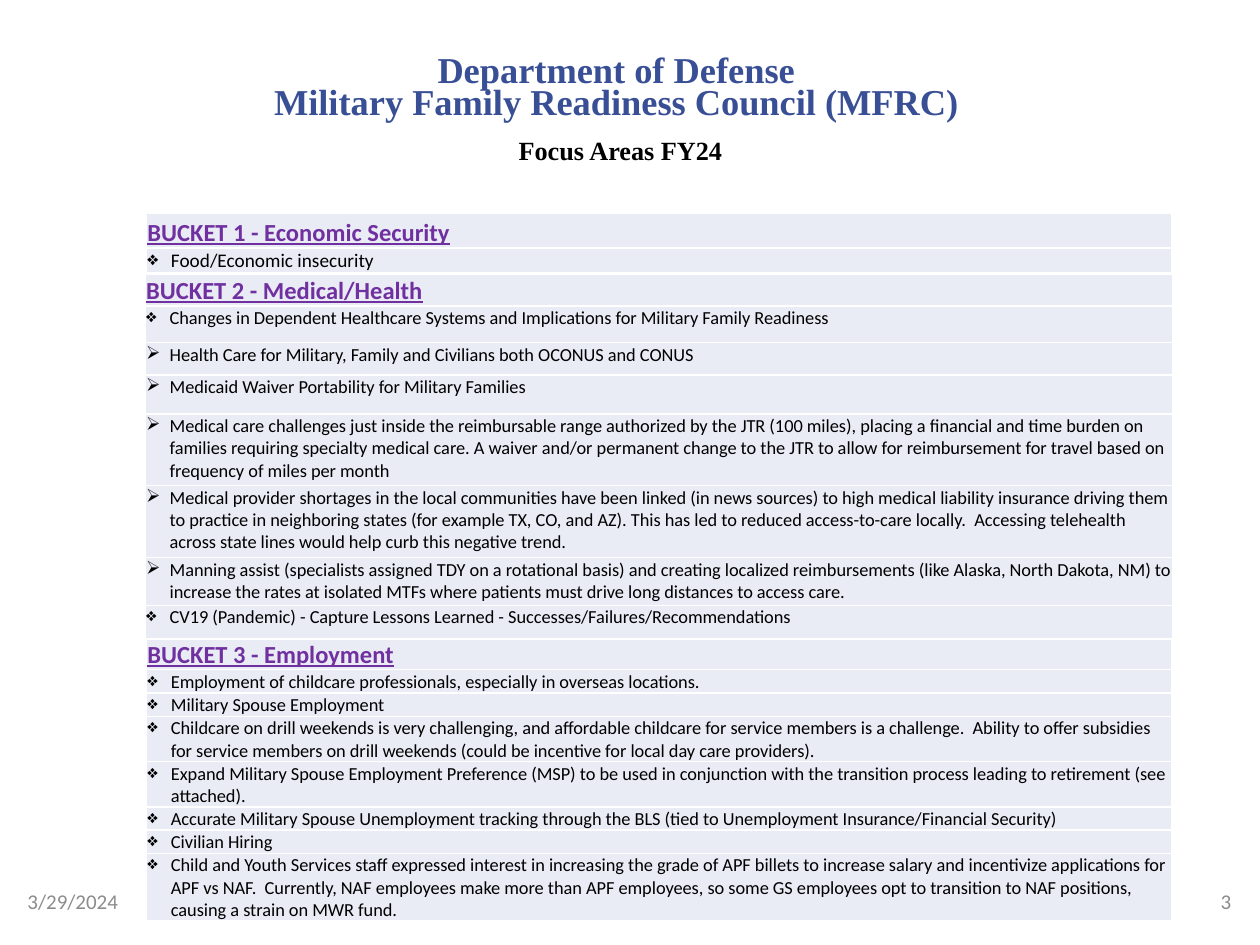
"""Build the council focus-areas slide with its three bucket tables."""
from dataclasses import dataclass

from pptx import Presentation
from pptx.dml.color import RGBColor
from pptx.enum.text import MSO_ANCHOR, PP_ALIGN
from pptx.oxml import parse_xml
from pptx.oxml.ns import nsdecls
from pptx.util import Pt

TITLE_BLUE = RGBColor(0x39, 0x4F, 0x95)
BLACK = RGBColor(0x00, 0x00, 0x00)
FOOTER_GRAY = RGBColor(0x8C, 0x8C, 0x8C)
HEADING_PURPLE = RGBColor(0x70, 0x30, 0xA0)
ROW_FILL = RGBColor(0xE9, 0xEB, 0xF5)
BORDER_WHITE = RGBColor(0xFF, 0xFF, 0xFF)

DIAMOND, ARROW = "❖", "➢"
HANG = Pt(13.5)
TITLE_INDENT = Pt(72)

TITLE_FORMAT = {"name": "Times New Roman", "size": Pt(20.8), "bold": True}
SUBTITLE_FORMAT = {"name": "Times New Roman", "size": Pt(15), "bold": True}
FOOTER_FORMAT = {"name": "Calibri", "size": Pt(12)}
HEADING_FORMAT = {"name": "Calibri", "size": Pt(14), "bold": True, "underline": True}
ITEM_FORMAT = {"name": "Calibri", "bold": False, "underline": False}
CELL_MARGINS = {"margin_left": Pt(0.7), "margin_right": Pt(0.7),
                "margin_top": Pt(0.7), "margin_bottom": Pt(0)}


@dataclass(frozen=True)
class Item:
    text: str
    height: float
    bullet: str = DIAMOND


@dataclass(frozen=True)
class Bucket:
    heading: str
    heading_height: float
    left: float
    top: float
    width: float
    items: tuple[Item, ...]
    heading_anchor: MSO_ANCHOR = MSO_ANCHOR.BOTTOM
    item_anchor: MSO_ANCHOR = MSO_ANCHOR.TOP
    item_size: float = 10.5


@dataclass(frozen=True)
class Caption:
    lines: tuple[str, ...]
    left: float
    top: float
    width: float
    height: float
    font: dict
    color: RGBColor
    align: PP_ALIGN
    frame: dict
    paragraph: dict
    indent: int = 0


MEDICAL = Bucket("BUCKET 2 - Medical/Health", 18.4, 82.8, 156.5, 587.5, (
    Item("Changes in Dependent Healthcare Systems and Implications for Military Family Readiness", 20.9),
    Item("Health Care for Military, Family and Civilians both OCONUS and CONUS", 18.6, ARROW),
    Item("Medicaid Waiver Portability for Military Families", 22.2, ARROW),
    Item("Medical care challenges just inside the reimbursable range authorized by the JTR "
         "(100 miles), placing a financial and time burden on families requiring specialty "
         "medical care. A waiver and/or permanent change to the JTR to allow for reimbursement "
         "for travel based on frequency of miles per month", 41, ARROW),
    Item("Medical provider shortages in the local communities have been linked (in news sources) "
         "to high medical liability insurance driving them to practice in neighboring states "
         "(for example TX, CO, and AZ). This has led to reduced access-to-care locally.  "
         "Accessing telehealth across state lines would help curb this negative trend.", 41, ARROW),
    Item("Manning assist (specialists assigned TDY on a rotational basis) and creating localized "
         "reimbursements (like Alaska, North Dakota, NM) to increase the rates at isolated MTFs "
         "where patients must drive long distances to access care.", 27.3, ARROW),
    Item("CV19 (Pandemic) - Capture Lessons Learned - Successes/Failures/Recommendations", 24.5),
))

EMPLOYMENT = Bucket("BUCKET 3 - Employment", 17.4, 83.5, 365.2, 586, (
    Item("Employment of childcare professionals, especially in overseas locations.", 13),
    Item("Military Spouse Employment", 13),
    Item("Childcare on drill weekends is very challenging, and affordable childcare for service "
         "members is a challenge.  Ability to offer subsidies for service members on drill "
         "weekends (could be incentive for local day care providers).", 25.4),
    Item("Expand Military Spouse Employment Preference (MSP) to be used in conjunction with the "
         "transition process leading to retirement (see attached).", 25.4),
    Item("Accurate Military Spouse Unemployment tracking through the BLS (tied to Unemployment "
         "Insurance/Financial Security)", 13),
    Item("Civilian Hiring", 13),
    Item("Child and Youth Services staff expressed interest in increasing the grade of APF billets "
         "to increase salary and incentivize applications for APF vs NAF.  Currently, NAF "
         "employees make more than APF employees, so some GS employees opt to transition to NAF "
         "positions, causing a strain on MWR fund.", 37.4),
), MSO_ANCHOR.MIDDLE, MSO_ANCHOR.BOTTOM)

ECONOMIC = Bucket("BUCKET 1 - Economic Security", 19.9, 83.5, 121.7, 586, (
    Item("Food/Economic insecurity", 14.4),
), item_size=11)

CENTERED = {"vertical_anchor": MSO_ANCHOR.MIDDLE}
CAPTIONS = (
    Caption(("Focus Areas FY24",), 83.5, 72, 553, 98.6, SUBTITLE_FORMAT, BLACK,
            PP_ALIGN.CENTER, {"margin_top": Pt(5), "margin_right": Pt(18)}, {}),
    Caption(("3/29/2024",), 8.6, 500.4, 162, 28.8, FOOTER_FORMAT, FOOTER_GRAY,
            PP_ALIGN.LEFT, CENTERED, {}),
    Caption(("Department of Defense", "Military Family Readiness Council (MFRC)"),
            54.7, 28.1, 522.7, 52.6, TITLE_FORMAT, TITLE_BLUE, PP_ALIGN.CENTER,
            {"margin_top": Pt(5.5)}, {"line_spacing": 0.7}, TITLE_INDENT),
    Caption(("3",), 548.6, 500.4, 162, 28.8, FOOTER_FORMAT, FOOTER_GRAY,
            PP_ALIGN.RIGHT, CENTERED, {}),
)


def apply_format(target, values: dict) -> None:
    """Set every attribute in values on target."""
    for attribute, value in values.items():
        setattr(target, attribute, value)


def write_run(paragraph, text: str, font: dict, color: RGBColor) -> None:
    """Add one formatted run to a paragraph."""
    run = paragraph.add_run()
    run.text = text
    apply_format(run.font, font)
    run.font.color.rgb = color


def add_caption(slide, caption: Caption) -> None:
    """Draw a text box with one paragraph per line."""
    box = slide.shapes.add_textbox(Pt(caption.left), Pt(caption.top),
                                   Pt(caption.width), Pt(caption.height))
    frame = box.text_frame
    apply_format(frame, {"word_wrap": True, **caption.frame})
    for index, line in enumerate(caption.lines):
        paragraph = frame.add_paragraph() if index else frame.paragraphs[0]
        apply_format(paragraph, {"alignment": caption.align, **caption.paragraph})
        if index:
            paragraph.space_before = Pt(0.8)
        if caption.indent:
            paragraph._p.get_or_add_pPr().set("indent", str(caption.indent))
        write_run(paragraph, line, caption.font, caption.color)


def style_cell(cell, anchor: MSO_ANCHOR) -> None:
    """Give a cell its margins, fill and white borders."""
    apply_format(cell, {"vertical_anchor": anchor, **CELL_MARGINS})
    cell.fill.solid()
    cell.fill.fore_color.rgb = ROW_FILL
    properties = cell._tc.get_or_add_tcPr()
    for index, side in enumerate(("lnL", "lnR", "lnT", "lnB")):
        properties.insert(index, parse_xml(
            f'<a:{side} {nsdecls("a")} w="{Pt(1)}"><a:solidFill>'
            f'<a:srgbClr val="{BORDER_WHITE}"/></a:solidFill></a:{side}>'))


def add_bullet(paragraph, bullet: str) -> None:
    """Give a paragraph a hanging bullet."""
    properties = paragraph._p.get_or_add_pPr()
    properties.set("marL", str(HANG))
    properties.set("indent", str(-HANG))
    properties.append(parse_xml(f'<a:buChar {nsdecls("a")} char="{bullet}"/>'))


def add_bucket(slide, bucket: Bucket) -> None:
    """Draw a bucket as a one-column table of a heading and its items."""
    heights = [bucket.heading_height, *(item.height for item in bucket.items)]
    table = slide.shapes.add_table(len(heights), 1, Pt(bucket.left), Pt(bucket.top),
                                   Pt(bucket.width), Pt(sum(heights))).table
    apply_format(table, {"first_row": False, "horz_banding": False})
    for row, height in zip(table.rows, heights):
        row.height = Pt(height)
    heading = table.cell(0, 0)
    style_cell(heading, bucket.heading_anchor)
    write_run(heading.text_frame.paragraphs[0], bucket.heading, HEADING_FORMAT, HEADING_PURPLE)
    for index, item in enumerate(bucket.items, start=1):
        cell = table.cell(index, 0)
        style_cell(cell, bucket.item_anchor)
        paragraph = cell.text_frame.paragraphs[0]
        add_bullet(paragraph, item.bullet)
        write_run(paragraph, item.text, {**ITEM_FORMAT, "size": Pt(bucket.item_size)}, BLACK)


def main() -> None:
    """Build and save the slide."""
    deck = Presentation()
    apply_format(deck, {"slide_width": Pt(720), "slide_height": Pt(540)})
    slide = deck.slides.add_slide(deck.slide_layouts[6])
    for caption in CAPTIONS:
        add_caption(slide, caption)
    for bucket in (MEDICAL, EMPLOYMENT, ECONOMIC):
        add_bucket(slide, bucket)
    deck.save("out.pptx")


if __name__ == "__main__":
    main()
